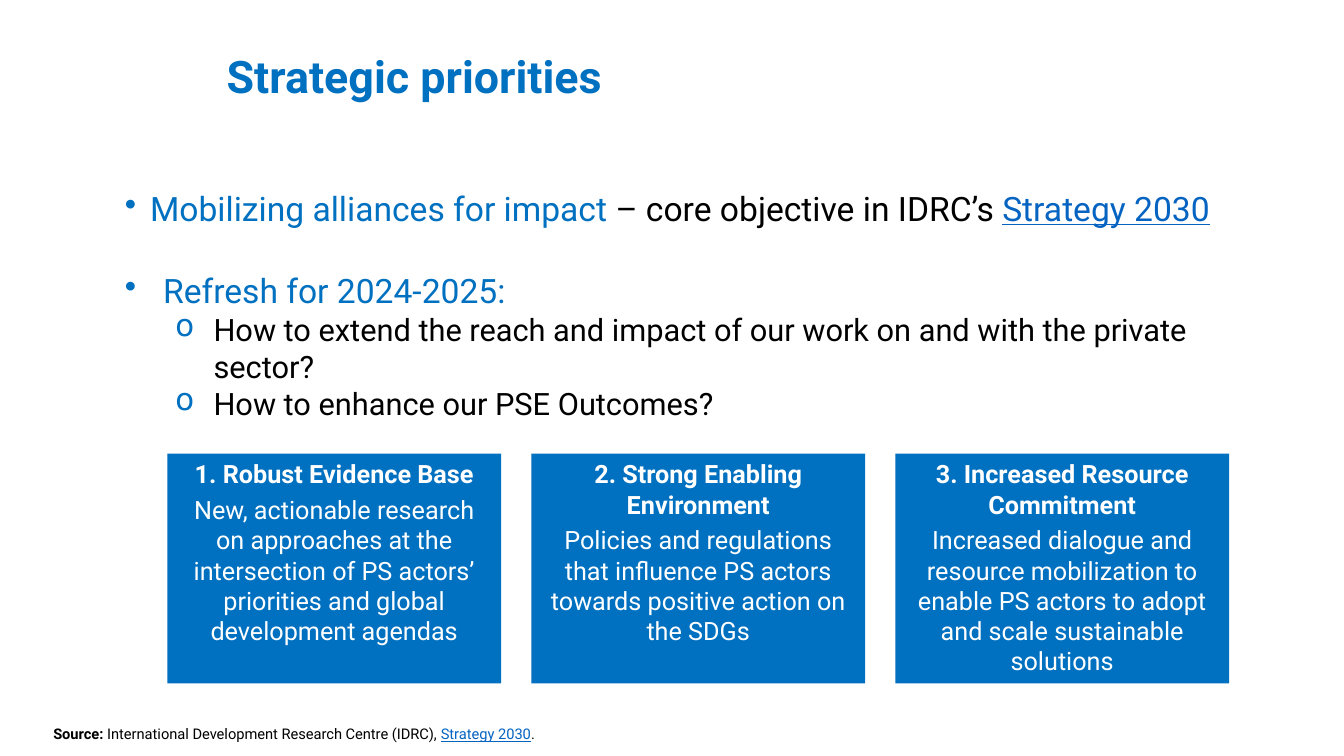
from pptx import Presentation as Deck
from pptx.dml.color import RGBColor as Color
from pptx.enum.shapes import MSO_SHAPE as Shape
from pptx.enum.text import MSO_ANCHOR as Anchor, MSO_AUTO_SIZE as Fit, PP_ALIGN as Align
from pptx.oxml.ns import qn
from pptx.util import Inches, Pt
from lxml.etree import SubElement as add_node

HUES = {"blue": "0070C0", "black": "000000", "white": "FFFFFF", "link": "0563C1"}
BOLD = {"bold": True}
LINK = {"underline": True}

CARDS = [
    ("1. Robust Evidence Base",
     "New, actionable research on approaches at the intersection of PS actors’ "
     "priorities and global development agendas"),
    ("2. Strong Enabling Environment",
     "Policies and regulations that influence PS actors towards positive action on the SDGs"),
    ("3. Increased Resource Commitment",
     "Increased dialogue and resource mobilization to enable PS actors to adopt "
     "and scale sustainable solutions"),
]


def put(target, values):
    for name, value in values.items():
        setattr(target, name, value)


class Page:
    font = "Roboto"

    def __init__(self, deck):
        self.slide = deck.slides.add_slide(deck.slide_layouts[6])

    def hue(self, name):
        return Color.from_string(HUES[name])

    def bullet(self, para, mark, indent, hang):
        props = para._p.get_or_add_pPr()
        props.set("marL", str(Inches(indent)))
        props.set("indent", str(-Inches(hang)))
        tint = add_node(props, qn("a:buClr"))
        add_node(tint, qn("a:srgbClr"), val=HUES["blue"])
        add_node(props, qn("a:buChar"), char=mark)

    def fill(self, frame, paras):
        for index, (runs, size, form, mark) in enumerate(paras):
            para = frame.add_paragraph() if index else frame.paragraphs[0]
            put(para, form)
            if mark:
                self.bullet(para, *mark)
            for words, tint, style in runs:
                run = para.add_run()
                run.text = words
                put(run.font, {"name": self.font, "size": Pt(size), **style})
                run.font.color.rgb = self.hue(tint)

    def text(self, box, paras, **form):
        frame = self.slide.shapes.add_textbox(*map(Inches, box)).text_frame
        put(frame, {"word_wrap": True, **form})
        self.fill(frame, paras)

    def card(self, box, head, body):
        shape = self.slide.shapes.add_shape(Shape.RECTANGLE, *map(Inches, box))
        shape.shadow.inherit = False
        shape.fill.solid()
        shape.fill.fore_color.rgb = self.hue("blue")
        shape.line.fill.background()
        put(shape.text_frame, {"word_wrap": True, "vertical_anchor": Anchor.TOP})
        mid = {"alignment": Align.CENTER}
        self.fill(shape.text_frame, [
            ([(head, "white", BOLD)], 18, {**mid, "space_after": Pt(4)}, None),
            ([(body, "white", {})], 18, mid, None),
        ])


def main():
    deck = Deck()
    put(deck, {"slide_width": Inches(13.33), "slide_height": Inches(7.5)})
    page = Page(deck)

    page.text((2.15, 0.42, 10.52, 0.66), [
        ([("Strategic priorities", "blue", BOLD)], 32, {}, None),
    ], vertical_anchor=Anchor.MIDDLE)

    page.text((0.43, 7.14, 10.19, 0.29), [
        ([("Source:", "black", BOLD),
          (" International Development Research Centre (IDRC), ", "black", {}),
          ("Strategy 2030", "link", LINK),
          (".", "black", {})], 10.5, {}, None),
    ], auto_size=Fit.SHAPE_TO_FIT_TEXT)

    page.text((1.14, 1.66, 11.04, 0.85), [
        ([("Mobilizing alliances for impact ", "blue", {}),
          ("– core objective in IDRC’s ", "black", {}),
          ("Strategy 2030", "link", LINK)], 24, {"line_spacing": 0.9}, ("•", 0.25, 0.25)),
    ], vertical_anchor=Anchor.MIDDLE)

    for index, (head, body) in enumerate(CARDS):
        page.card((1.66 + index * 3.61, 4.5, 3.31, 2.28), head, body)

    asks = ["How to extend the reach and impact of our work on and with the private sector?",
            "How to enhance our PSE Outcomes?"]
    page.text((1.14, 2.63, 11.04, 1.62), [
        ([("Refresh for 2024-2025:", "blue", {})], 24, {}, ("•", 0.38, 0.38)),
        *[([(ask, "black", {})], 22, {"level": 1}, ("o", 0.88, 0.38)) for ask in asks],
    ], auto_size=Fit.SHAPE_TO_FIT_TEXT)

    deck.save("out.pptx")


if __name__ == "__main__":
    main()
